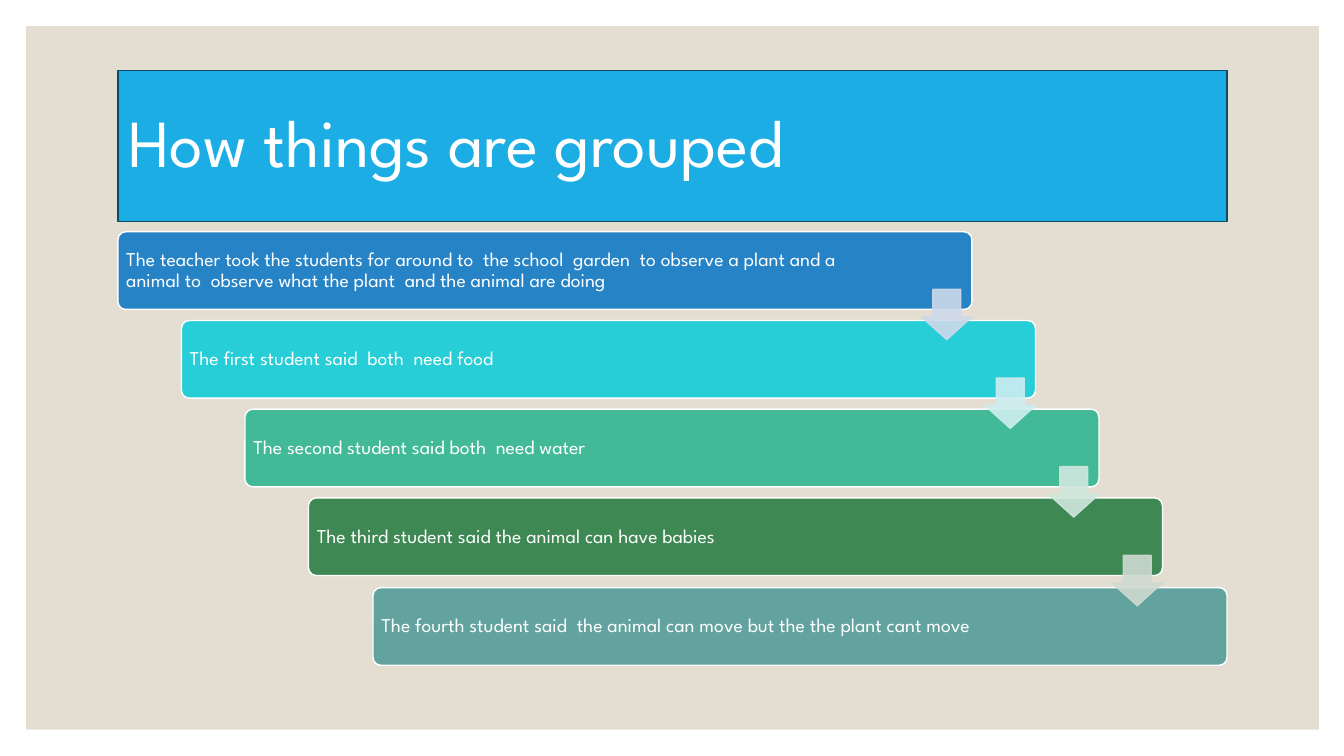
"""Build a slide with a title banner and five cascading steps joined by arrows."""
from dataclasses import dataclass

from lxml import etree
from pptx import Presentation
from pptx.dml.color import RGBColor
from pptx.enum.shapes import MSO_SHAPE
from pptx.enum.text import MSO_ANCHOR, MSO_AUTO_SIZE, PP_ALIGN
from pptx.oxml.ns import qn
from pptx.shapes.autoshape import Shape
from pptx.slide import Slide
from pptx.util import Pt

RECT = MSO_SHAPE.RECTANGLE
ROUND = MSO_SHAPE.ROUNDED_RECTANGLE
ARROW = MSO_SHAPE.DOWN_ARROW
MIDDLE = MSO_ANCHOR.MIDDLE
LEFT = PP_ALIGN.LEFT
FIXED = MSO_AUTO_SIZE.NONE

SCALE = 9144
FONT = "League Spartan"
COLORS = {
    "white": "FFFFFF",
    "sand": "E3DED1",
    "sky": "1CADE4",
    "navy": "0C4C64",
    "blue": "2683C6",
    "aqua": "27CED7",
    "mint": "42BA97",
    "green": "3E8853",
    "teal": "62A39F",
    "pale blue": "CDD9EA",
    "pale aqua": "CDEDF0",
    "pale mint": "CFE7DD",
    "pale green": "CEDAD1",
}


@dataclass(frozen=True)
class Box:
    left: int
    top: int
    width: int
    height: int


@dataclass(frozen=True)
class Step:
    text: str
    fill: str
    arrow: str | None = None


PANEL = Box(26, 26, 1282, 698)
BANNER = Box(117, 70, 1100, 150)
FIRST = Box(117, 230, 847, 77)
LAST = Box(370, 583, 847, 77)
STEPS = [
    Step("The teacher took the students for around to  the school  garden  "
         "to observe a plant and a animal to  observe what the plant  "
         "and the animal are doing", "blue", "pale blue"),
    Step("The first student said  both  need food", "aqua", "pale aqua"),
    Step("The second student said both  need water", "mint", "pale mint"),
    Step("The third student said the animal can have babies",
         "green", "pale green"),
    Step("The fourth student said  the animal can move but the the plant "
         "cant move", "teal"),
]


def px(count: int) -> int:
    return count * SCALE


def color(name: str) -> RGBColor:
    return RGBColor.from_string(COLORS[name])


def paint(shape: Shape, fill: str, line: str | None = None) -> None:
    shape.fill.solid()
    shape.fill.fore_color.rgb = color(fill)
    if line is None:
        shape.line.fill.background()
    else:
        shape.line.color.rgb = color(line)
        shape.line.width = Pt(1)


def fade(shape: Shape, percent: int) -> None:
    for tone in shape.element.spPr.iter(qn("a:srgbClr")):
        etree.SubElement(tone, qn("a:alpha"), val=str(percent * 1000))


def draw(slide: Slide, kind: MSO_SHAPE, box: Box, fill: str,
         line: str | None = None, adjust: tuple[float, ...] = ()) -> Shape:
    shape = slide.shapes.add_shape(
        kind, px(box.left), px(box.top), px(box.width), px(box.height))
    shape.shadow.inherit = False
    for i, value in enumerate(adjust):
        shape.adjustments[i] = value
    paint(shape, fill, line)
    return shape


def write(shape: Shape, text: str, *, size: int, left: int = 10,
          right: int = 10, edge: int = 5) -> None:
    frame = shape.text_frame
    frame.word_wrap = True
    frame.auto_size = FIXED
    frame.vertical_anchor = MIDDLE
    frame.margin_left, frame.margin_right = px(left), px(right)
    frame.margin_top = frame.margin_bottom = px(edge)
    frame.text = text
    para = frame.paragraphs[0]
    para.alignment = LEFT
    para.line_spacing = 0.9
    font = para.runs[0].font
    font.name = FONT
    font.size = Pt(size)
    font.color.rgb = color("white")


def add_title(slide: Slide, panel: Shape) -> None:
    title = slide.shapes.title
    panel.element.addnext(title.element)
    title.left, title.top = px(BANNER.left), px(BANNER.top)
    title.width, title.height = px(BANNER.width), px(BANNER.height)
    paint(title, "sky", "navy")
    write(title, "How things are grouped", size=48)


def add_steps(slide: Slide) -> None:
    gaps = len(STEPS) - 1
    spots = [Box(FIRST.left + (LAST.left - FIRST.left) * i // gaps,
                 FIRST.top + (LAST.top - FIRST.top) * i // gaps,
                 FIRST.width, FIRST.height) for i in range(len(STEPS))]
    for step, spot in zip(STEPS, spots):
        bar = draw(slide, ROUND, spot, step.fill, "white", (0.1,))
        write(bar, step.text, size=14, left=6, right=95, edge=6)
    for step, spot in zip(STEPS, spots):
        if step.arrow:
            box = Box(spot.left + 797, spot.top + 57, 50, 50)
            arrow = draw(slide, ARROW, box, step.arrow, step.arrow,
                         (0.55, 0.45))
            fade(arrow, 90)


def main() -> None:
    deck = Presentation()
    deck.slide_width, deck.slide_height = px(1333), px(750)
    slide = deck.slides.add_slide(deck.slide_layouts.get_by_name("Title Only"))
    slide.background.fill.solid()
    slide.background.fill.fore_color.rgb = color("white")
    panel = draw(slide, RECT, PANEL, "sand")
    add_title(slide, panel)
    add_steps(slide)
    deck.save("out.pptx")


if __name__ == "__main__":
    main()
